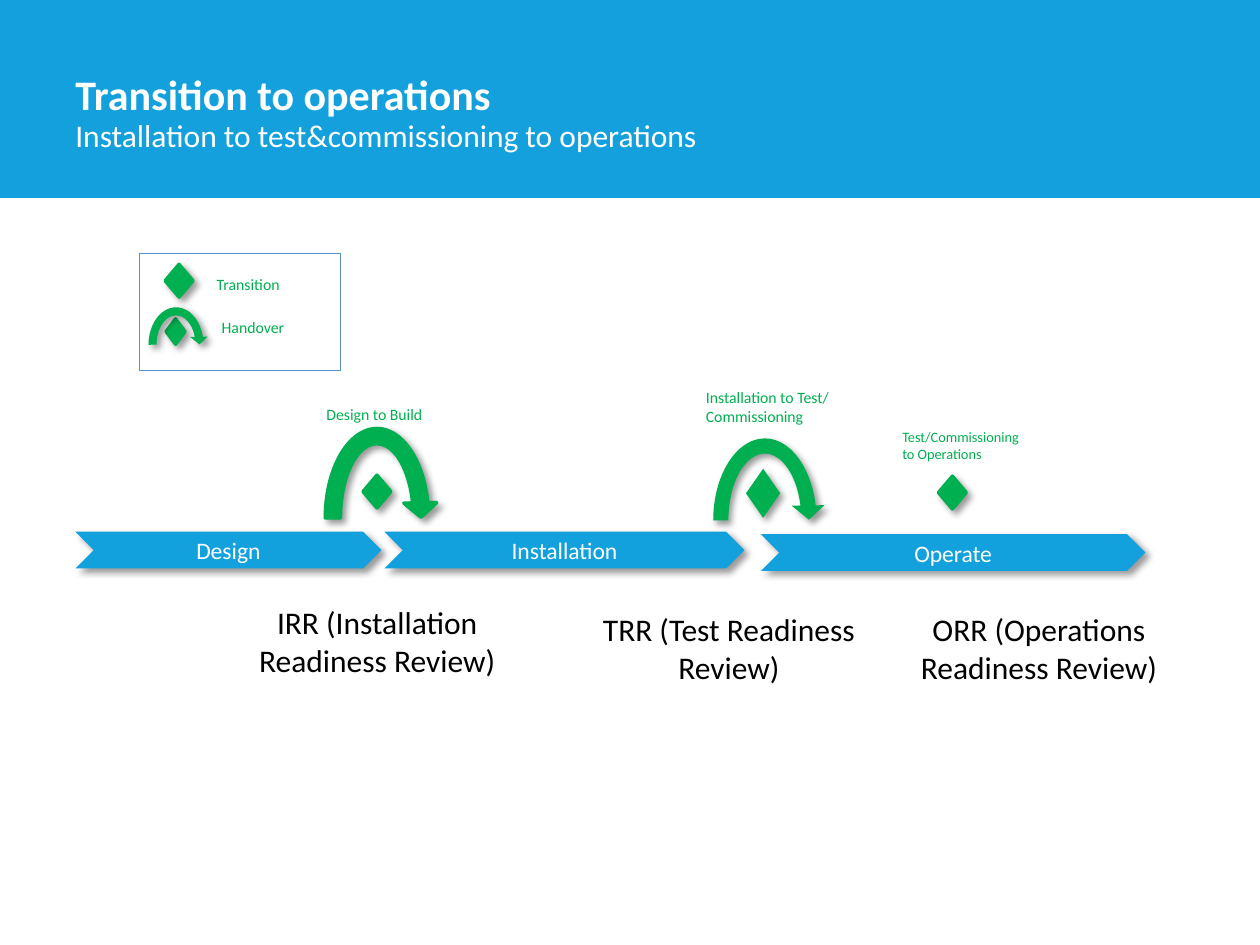
"""Build the slide on the transition from installation to operations."""
import lxml.etree
import pptx
import pptx.dml.color
import pptx.enum.shapes
import pptx.enum.text
import pptx.oxml.ns
import pptx.util

Cm, Pt = pptx.util.Cm, pptx.util.Pt
RGB = pptx.dml.color.RGBColor.from_string
MSO = pptx.enum.shapes.MSO_SHAPE
ANCHOR = pptx.enum.text.MSO_ANCHOR
ALIGN = pptx.enum.text.PP_ALIGN
COLORS = {"band": "13A0DD", "phase": "13A1DD", "green": "00B050",
          "frame": "558ED5", "white": "FFFFFF", "black": "000000"}
ARC = (0.125, 10.942, 204.577, 107.922, 0.136)
SHADOW = (
    '<a:effectLst xmlns:a="http://schemas.openxmlformats.org/drawingml/2006/main">'
    '<a:outerShdw blurRad="50800" dist="38100" dir="2700000" algn="tl" rotWithShape="0">'
    '<a:srgbClr val="000000"><a:alpha val="40000"/></a:srgbClr>'
    '</a:outerShdw></a:effectLst>')


def add_shape(kind, box, fill=None, line=None, width=2, shadow=True):
    sp = s.shapes.add_shape(kind, *map(Cm, box))
    sp.shadow.inherit = False
    if fill:
        sp.fill.solid()
        sp.fill.fore_color.rgb = RGB(COLORS[fill])
    else:
        sp.fill.background()
    if line:
        sp.line.color.rgb = RGB(COLORS[line])
        sp.line.width = Pt(width)
    else:
        sp.line.fill.background()
    if shadow:
        props = sp.fill._xPr
        old = props.find(pptx.oxml.ns.qn("a:effectLst"))
        props.replace(old, lxml.etree.fromstring(SHADOW))
    return sp


def write(sp, lines, size, color, frame=None, align=ALIGN.LEFT, bold=False):
    tf = sp.text_frame
    for name, value in {"word_wrap": True, **(frame or {})}.items():
        setattr(tf, name, value)
    for i, text in enumerate(lines):
        p = tf.add_paragraph() if i else tf.paragraphs[0]
        p.alignment = align
        r = p.add_run()
        r.text = text
        font = {"name": "Calibri", "size": Pt(size), "bold": bold}
        for name, value in font.items():
            setattr(r.font, name, value)
        r.font.color.rgb = RGB(COLORS[color])


prs = pptx.Presentation()
prs.slide_width, prs.slide_height = Cm(25.4), Cm(19.05)
s = prs.slides.add_slide(prs.slide_layouts[6])

add_shape(MSO.RECTANGLE, (0, 0, 25.4, 3.99), "band", shadow=False)
for text, top, height, size, bold, anchor in [
    ("Transition to operations", 0.97, 1.55, 24, True, ANCHOR.BOTTOM),
    ("Installation to test&commissioning to operations", 2.21, 1.65, 18, False, ANCHOR.TOP),
]:
    sp = s.shapes.add_textbox(Cm(1.27), Cm(top), Cm(19.84), Cm(height))
    write(sp, [text], size, "white", {"vertical_anchor": anchor}, bold=bold)

add_shape(MSO.RECTANGLE, (2.82, 5.11, 4.04, 2.36), None, "frame", 0.75, False)

for box, line in [
    ((15.04, 9.45, 0.69, 0.99), None),
    ((7.32, 9.58, 0.56, 0.66), "green"),
    ((18.92, 9.6, 0.56, 0.66), "green"),
    ((3.33, 5.33, 0.56, 0.66), "green"),
    ((3.35, 6.43, 0.38, 0.51), "green"),
]:
    add_shape(MSO.FLOWCHART_DECISION, box, "green", line)

for text, box in [
    ("Design", (1.52, 10.72, 6.17, 0.74)),
    ("Installation", (7.75, 10.72, 7.26, 0.74)),
    ("Operate", (15.34, 10.77, 7.75, 0.74)),
]:
    sp = add_shape(MSO.CHEVRON, box, "phase")
    write(sp, [text], 13.5, "white", {"vertical_anchor": ANCHOR.MIDDLE}, ALIGN.CENTER)

for box, line in [
    ((14.2, 8.66, 2.44, 3.66), None),
    ((6.38, 8.46, 2.44, 3.96), "green"),
    ((2.9, 6.1, 1.3, 1.7), None),
]:
    sp = add_shape(MSO.CIRCULAR_ARROW, box, "green", line)
    for i, value in enumerate(ARC):
        sp.adjustments[i] = value

tight = {"margin_left": Cm(0.18), "margin_right": Cm(0.18),
         "margin_top": Cm(0.1), "margin_bottom": Cm(0.1)}
for lines, box, size in [
    (["Design to Build"], (6.4, 8.05, 2.46, 0.56), 9),
    (["Installation to Test/", "Commissioning"], (14.05, 7.72, 3.28, 0.94), 9),
    (["Test/Commissioning", "to Operations"], (18.01, 8.53, 2.95, 0.81), 8.2),
    (["Transition"], (4.19, 5.44, 3.12, 0.74), 9),
    (["Handover"], (4.29, 6.3, 2.57, 0.74), 9),
]:
    write(s.shapes.add_textbox(*map(Cm, box)), lines, size, "green", tight)

for text, left, top in [
    ("IRR (Installation Readiness Review)", 4.52, 12.04),
    ("TRR (Test Readiness Review)", 11.61, 12.17),
    ("ORR (Operations Readiness Review)", 17.86, 12.17),
]:
    sp = s.shapes.add_textbox(Cm(left), Cm(top), Cm(6.17), Cm(1.8))
    write(sp, [text], 18, "black", align=ALIGN.CENTER)

prs.save("out.pptx")
